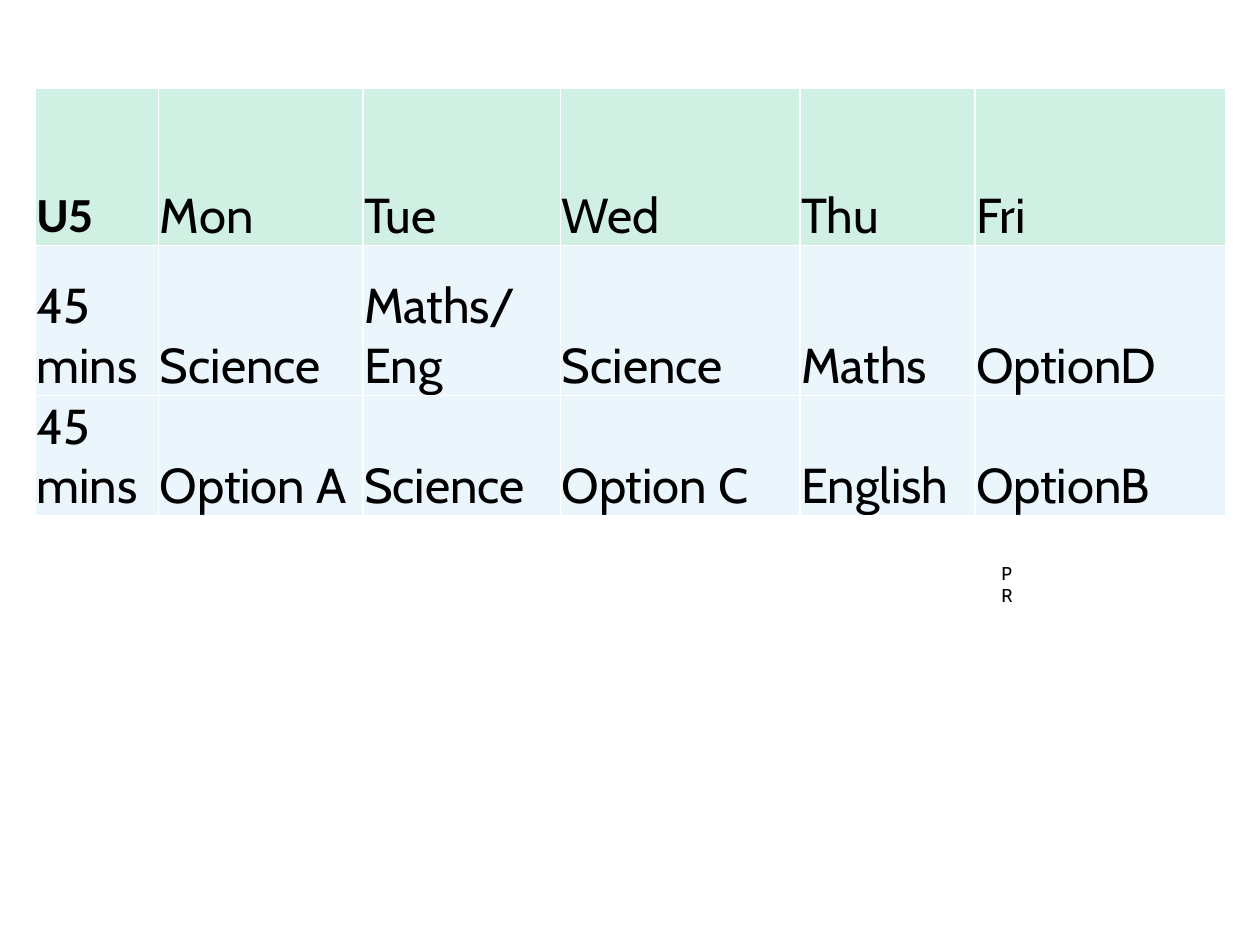
from dataclasses import dataclass

import pptx
import pptx.dml.color
import pptx.enum.text
import pptx.oxml
import pptx.oxml.ns
import pptx.util

Inches = pptx.util.Inches
Pt = pptx.util.Pt
RGBColor = pptx.dml.color.RGBColor


@dataclass(frozen=True)
class Theme:
    text: str = "000000"
    header: str = "CFF0E3"
    body: str = "EAF6FC"
    border: str = "FFFFFF"
    font: str = "Cabin"
    label_font: str = "Calibri"
    table_size: float = 28
    note_size: float = 10.6


THEME = Theme()
COLUMN_WIDTHS = [0.98, 1.62, 1.57, 1.9, 1.39, 1.99]
ROW_HEIGHTS = [1.25, 1.19, 0.78]
TIMETABLE = [
    ["U5", "Mon", "Tue", "Wed", "Thu", "Fri"],
    ["45 mins", "Science", "Maths/\nEng", "Science", "Maths", "OptionD"],
    ["45 mins", "Option A", "Science", "Option C", "English", "OptionB"],
]


def format_text(tf, font, size, bold=False):
    for p in tf.paragraphs:
        for r in p.runs:
            r.font.name = font
            r.font.size = Pt(size)
            r.font.bold = bold
            r.font.color.rgb = RGBColor.from_string(THEME.text)


def set_borders(cell):
    tc_pr = cell._tc.get_or_add_tcPr()
    for i, side in enumerate(("lnL", "lnR", "lnT", "lnB")):
        ns = pptx.oxml.ns.nsdecls("a")
        line = pptx.oxml.parse_xml(
            f'<a:{side} {ns} w="{Pt(1)}"><a:solidFill>'
            f'<a:srgbClr val="{THEME.border}"/></a:solidFill></a:{side}>')
        tc_pr.insert(i, line)


def fill_cell(cell, text, color):
    cell.text_frame.text = text
    cell.vertical_anchor = pptx.enum.text.MSO_ANCHOR.BOTTOM
    cell.margin_left = cell.margin_right = cell.margin_top = Inches(0.01)
    cell.margin_bottom = 0
    cell.fill.solid()
    cell.fill.fore_color.rgb = RGBColor.from_string(color)
    set_borders(cell)


def add_timetable(s, left, top, width, height):
    table = s.shapes.add_table(
        len(ROW_HEIGHTS), len(COLUMN_WIDTHS), left, top, width, height).table
    for column, w in zip(table.columns, COLUMN_WIDTHS):
        column.width = Inches(w)
    for row, h in zip(table.rows, ROW_HEIGHTS):
        row.height = Inches(h)
    for i, texts in enumerate(TIMETABLE):
        for j, text in enumerate(texts):
            cell = table.cell(i, j)
            fill_cell(cell, text, THEME.body if i else THEME.header)
            is_label = i == j == 0
            font = THEME.label_font if is_label else THEME.font
            format_text(cell.text_frame, font, THEME.table_size, is_label)


def add_note(s, left, top, width, height):
    tf = s.shapes.add_textbox(left, top, width, height).text_frame
    tf.word_wrap = True
    tf.text = "PR"
    tf.paragraphs[0].space_after = Pt(6)
    format_text(tf, THEME.font, THEME.note_size)


def main():
    prs = pptx.Presentation()
    prs.slide_width, prs.slide_height = Inches(10), Inches(7.5)
    s = prs.slides.add_slide(prs.slide_layouts[6])
    add_timetable(s, Inches(0.28), Inches(0.7),
                  Inches(sum(COLUMN_WIDTHS)), Inches(sum(ROW_HEIGHTS)))
    add_note(s, Inches(7.85), Inches(4.41), Inches(0.36), Inches(0.28))
    prs.save("out.pptx")


if __name__ == "__main__":
    main()
